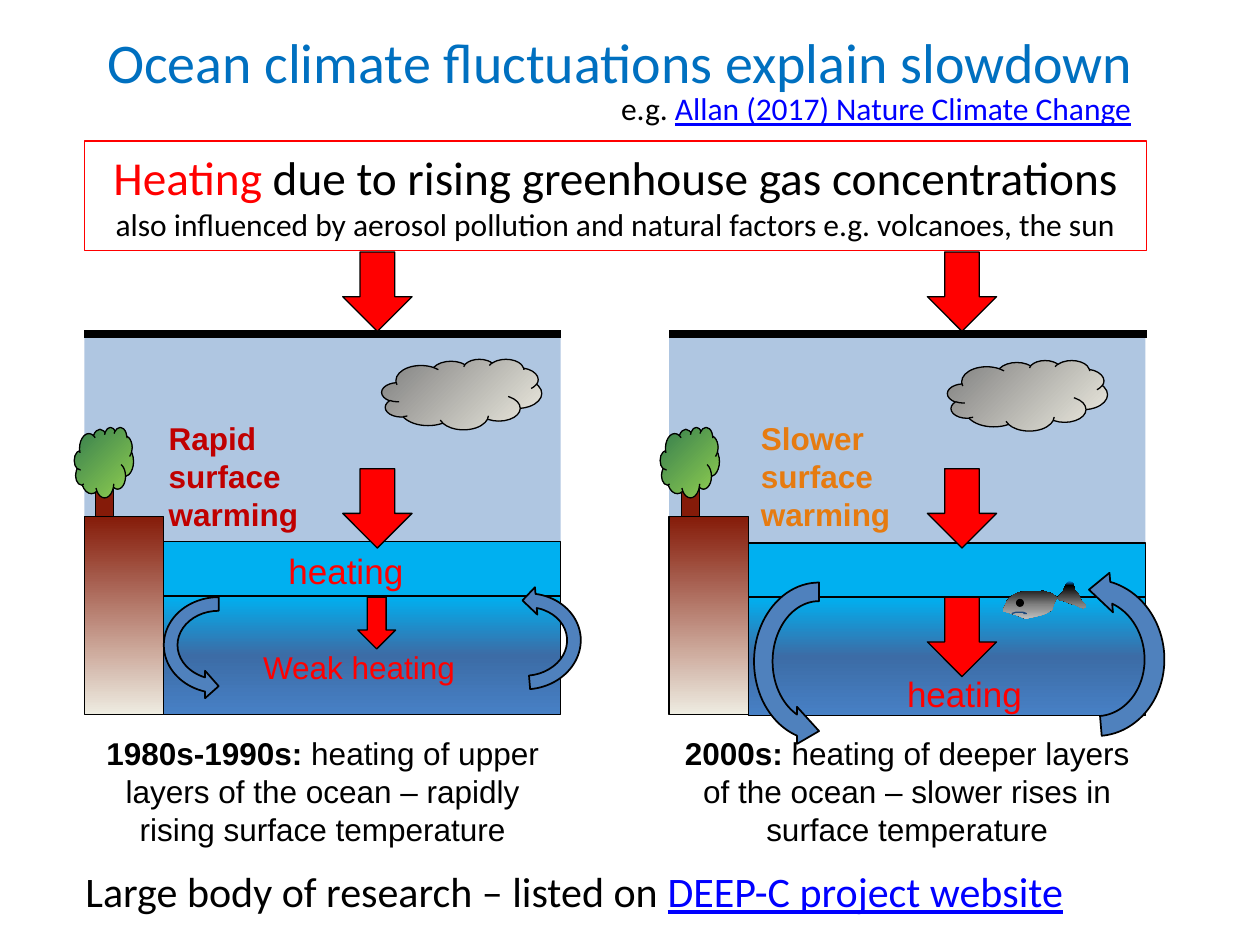
import pptx
import pptx.util
import pptx.dml.color
import pptx.enum.shapes
import pptx.enum.text
import pptx.oxml
import pptx.oxml.ns
import lxml.etree

Inches = pptx.util.Inches
RGBColor = pptx.dml.color.RGBColor
KIND = pptx.enum.shapes.MSO_SHAPE
ALIGN = pptx.enum.text.PP_ALIGN
ANCHOR = pptx.enum.text.MSO_ANCHOR
qn = pptx.oxml.ns.qn

BLACK = RGBColor(0x00, 0x00, 0x00)
RED = RGBColor(0xFF, 0x00, 0x00)
DARK_RED = RGBColor(0xC0, 0x00, 0x00)
ORANGE = RGBColor(0xE6, 0x7B, 0x10)
BLUE = RGBColor(0x4F, 0x81, 0xBD)
NAVY = RGBColor(0x1F, 0x49, 0x7D)
SKY = RGBColor(0x00, 0xB0, 0xF0)
TITLE = RGBColor(0x00, 0x70, 0xC0)
LINK = RGBColor(0x00, 0x00, 0xFF)
BROWN = RGBColor(0x85, 0x1B, 0x09)
CREAM = RGBColor(0xEE, 0xEC, 0xE1)
GREY = RGBColor(0x80, 0x80, 0x80)
SILVER = RGBColor(0xBF, 0xBF, 0xBF)
LEAF = RGBColor(0x92, 0xD0, 0x50)
PINE = RGBColor(0x36, 0x7E, 0x4E)
DEEP = RGBColor(0x3C, 0x6C, 0xA6)
FLOOR = RGBColor(0x47, 0x80, 0xC5)

SEA = [(0, SKY), (50, DEEP), (100, FLOOR)]
LAND = [(0, BROWN), (100, CREAM)]
TREE = [(0, LEAF), (100, PINE)]
CLOUD = [(0, CREAM), (100, GREY)]
SCALES = [(0, TITLE), (9, BLACK), (62, GREY), (100, SILVER)]

FISH = [
    (8.49, 4.78), (8.46, 4.77), (8.43, 4.76), (8.4, 4.75), (8.38, 4.74), (8.37, 4.72),
    (8.35, 4.71), (8.33, 4.7), (8.3, 4.7), (8.28, 4.69), (8.18, 4.7), (8.08, 4.67),
    (8.01, 4.75), (8, 4.76), (7.98, 4.78), (7.98, 4.8), (7.97, 4.82), (7.96, 4.84),
    (7.96, 4.85), (7.98, 4.86), (8.01, 4.86), (8.03, 4.87), (8.07, 4.88), (8.14, 4.91),
    (8.14, 4.91), (8.18, 4.9), (8.25, 4.89), (8.3, 4.87), (8.32, 4.86), (8.33, 4.85),
    (8.35, 4.84), (8.36, 4.82), (8.36, 4.8), (8.37, 4.78), (8.39, 4.74), (8.41, 4.73),
    (8.44, 4.69), (8.45, 4.67), (8.46, 4.59), (8.51, 4.62), (8.53, 4.63), (8.52, 4.66),
    (8.53, 4.68), (8.54, 4.69), (8.55, 4.7), (8.56, 4.71), (8.57, 4.73), (8.57, 4.75),
    (8.58, 4.76), (8.59, 4.78), (8.64, 4.81), (8.62, 4.82), (8.59, 4.84), (8.56, 4.81),
    (8.53, 4.8), (8.39, 4.76), (8.46, 4.76), (8.4, 4.76)]
MOUTH = [
    (8.03, 4.87), (8.04, 4.87), (8.05, 4.87), (8.06, 4.86), (8.06, 4.86), (8.07, 4.86),
    (8.07, 4.86), (8.09, 4.86), (8.1, 4.86), (8.12, 4.86), (8.17, 4.87), (8.09, 4.87),
    (8.15, 4.87)]


def paint(shape, fill=None, line=None, width=0.75):
    """Set a solid or empty fill and line, with no shadow."""
    shape.shadow.inherit = False
    for part, tint in ((shape.fill, fill), (shape.line.fill, line)):
        if tint is None:
            part.background()
        else:
            part.solid()
            part.fore_color.rgb = tint
    if line is not None:
        shape.line.width = pptx.util.Pt(width)


def blend(shape, stops, round=False):
    """Swap the empty fill of a shape for a gradient."""
    grad = lxml.etree.Element(qn("a:gradFill"), rotWithShape="1")
    marks = lxml.etree.SubElement(grad, qn("a:gsLst"))
    for place, tint in stops:
        mark = lxml.etree.SubElement(marks, qn("a:gs"), pos=str(place * 1000))
        lxml.etree.SubElement(mark, qn("a:srgbClr"), val=str(tint))
    if round:
        way = lxml.etree.SubElement(grad, qn("a:path"), path="circle")
        lxml.etree.SubElement(way, qn("a:fillToRect"), l="100000", t="100000")
    else:
        lxml.etree.SubElement(grad, qn("a:lin"), ang="5400000", scaled="0")
    props = shape._element.spPr
    props.replace(props.find(qn("a:noFill")), grad)


def block(shapes, kind, box, fill=None, line=BLACK, width=0.75):
    """Add a preset shape; a list as fill makes a gradient."""
    shape = shapes.add_shape(kind, *map(Inches, box))
    if isinstance(fill, list):
        paint(shape, None, line, width)
        blend(shape, fill, kind == KIND.CLOUD)
    else:
        paint(shape, fill, line, width)
    return shape


def arrow(shapes, left, top, width=0.55, height=0.63):
    """Add a red arrow that points down."""
    shape = block(shapes, KIND.DOWN_ARROW, (left, top, width, height), RED)
    shape.adjustments[1] = 0.5


def swirl(shapes, box, turn):
    """Add a mirrored, turned circular arrow."""
    shape = block(shapes, KIND.CIRCULAR_ARROW, box, BLUE, BLACK, 1)
    shape._element.spPr.xfrm.set("flipH", "1")
    shape.rotation = turn


def write(par, runs, size, face, align=ALIGN.LEFT, tint=None):
    """Fill a paragraph with runs of text, tint, bold and underline."""
    par.alignment = align
    par.font.size = pptx.util.Pt(size)
    par.font.name = face
    if tint is not None:
        par.font.color.rgb = tint
    for text, style in runs:
        run = par.add_run()
        run.text = text
        for key, value in style.items():
            if key == "tint":
                run.font.color.rgb = value
            else:
                setattr(run.font, key, value)


def label(shapes, box, runs, size, face="Arial", align=ALIGN.CENTER, tint=BLACK):
    """Add a wrapped text box with one paragraph."""
    frame = shapes.add_textbox(*map(Inches, box)).text_frame
    frame.word_wrap = True
    write(frame.paragraphs[0], runs, size, face, align, tint)


def curve(shapes, nodes):
    """Add a freeform whose segments are cubic curves."""
    spots = [tuple(map(Inches, node)) for node in nodes]
    pen = shapes.build_freeform(*spots[0])
    pen.add_line_segments(spots[3::3], close=False)
    shape = pen.convert_to_shape()
    left, top = min(x for x, y in spots[::3]), min(y for x, y in spots[::3])
    for place, leg in enumerate(list(shape._element.iter(qn("a:lnTo")))):
        bend = lxml.etree.Element(qn("a:cubicBezTo"))
        for x, y in spots[3 * place + 1:3 * place + 4]:
            lxml.etree.SubElement(bend, qn("a:pt"), x=str(x - left), y=str(y - top))
        leg.getparent().replace(leg, bend)
    return shape


def fish(shapes):
    """Draw the fish as a group."""
    group = shapes.add_group_shape().shapes
    body = curve(group, FISH)
    paint(body)
    blend(body, SCALES)
    block(group, KIND.OVAL, (8.07, 4.76, 0.05, 0.05), BLACK, BLACK, 1)
    paint(curve(group, MOUTH), None, NAVY)


def panel(shapes, left, slip, cloud, pace, tint, years, story):
    """Draw one decade: air, sea, land, tree, cloud, arrows and words."""
    air = block(shapes, KIND.RECTANGLE, (left, 2.65, 3.78, 1.65 + 5 * slip), BLUE, None)
    shade = air._element.spPr.find(qn("a:solidFill"))[0]
    lxml.etree.SubElement(shade, qn("a:alpha"), val="45000")
    block(shapes, KIND.RECTANGLE, (left + 0.63, 4.73 + slip, 3.15, 0.94), SEA)
    block(shapes, KIND.RECTANGLE, (left, 4.1, 0.63, 1.57), LAND)
    block(shapes, KIND.RECTANGLE, (left + 0.63, 4.3 + slip, 3.15, 0.43), SKY)
    block(shapes, KIND.RECTANGLE, (left + 0.09 + slip, 3.84, 0.14, 0.26), BROWN)
    block(shapes, KIND.CLOUD, (left - 0.08 + slip, 3.39, 0.47, 0.56), TREE)
    top = shapes.add_connector(
        pptx.enum.shapes.MSO_CONNECTOR.STRAIGHT,
        *map(Inches, (left, 2.65, left + 3.78 + slip, 2.65)))
    top.line.color.rgb = BLACK
    top.line.width = pptx.util.Pt(5)
    lxml.etree.SubElement(top._element.spPr, qn("a:effectLst"))
    block(shapes, KIND.CLOUD, (cloud, 2.85 + slip, 1.27, 0.56), CLOUD)
    for height in (2, 3.72):
        arrow(shapes, left + 2.05, height)
    label(shapes, (left + 0.57 + 6 * slip, 3.28, 1.63, 1.01),
          [(pace + " surface warming", {"bold": True})], 18, align=ALIGN.LEFT, tint=tint)
    label(shapes, (left, 5.78, 3.78, 1.01),
          [(years + ": ", {"bold": True}), (story, {})], 18)


def main():
    """Build and save the slide."""
    deck = pptx.Presentation()
    deck.slide_width, deck.slide_height = Inches(10), Inches(7.5)
    shapes = deck.slides.add_slide(deck.slide_layouts[6]).shapes
    panel(shapes, 0.67, 0, 3.03, "Rapid", DARK_RED, "1980s-1990s",
          "heating of upper layers of the ocean – rapidly rising surface temperature")
    panel(shapes, 5.31, 0.01, 7.52, "Slower", ORANGE, "2000s",
          "heating of deeper layers of the ocean – slower rises in surface temperature")
    arrow(shapes, 2.84, 4.74, 0.3, 0.41)
    arrow(shapes, 7.36, 4.74)
    label(shapes, (2.09, 4.31, 1.31, 0.44), [("heating", {})], 20, tint=RED)
    label(shapes, (1.73, 5.09, 2.24, 0.4), [("Weak heating", {})], 18, tint=RED)
    label(shapes, (7, 5.29, 1.31, 0.44), [("heating", {})], 20, tint=RED)
    swirl(shapes, (1.3, 4.63, 0.87, 0.98), 270)
    swirl(shapes, (3.74, 4.6, 0.87, 0.98), 85)
    swirl(shapes, (5.8, 4.66, 1.4, 1.18), 270)
    swirl(shapes, (7.99, 4.59, 1.4, 1.26), 85)
    cause = block(shapes, KIND.RECTANGLE, (0.67, 1.12, 8.43, 0.87), None, RED).text_frame
    cause.word_wrap = True
    cause.vertical_anchor = ANCHOR.MIDDLE
    write(cause.paragraphs[0],
          [("Heating", {"tint": RED}),
           (" due to rising greenhouse gas concentrations", {"tint": BLACK})],
          27, "Calibri", ALIGN.CENTER)
    write(cause.add_paragraph(),
          [("also influenced by aerosol pollution and natural factors e.g. volcanoes, the sun", {})],
          18, "Calibri", ALIGN.CENTER, BLACK)
    link = {"tint": LINK, "underline": True}
    label(shapes, (0.28, 0.17, 9.29, 0.83),
          [("Ocean climate fluctuations explain slowdown", {})], 32, "Calibri", tint=TITLE)
    label(shapes, (0.58, 6.82, 8.36, 0.5),
          [("Large body of research – listed on ", {"tint": BLACK}),
           ("DEEP-C project website", link)], 24, "Calibri", ALIGN.LEFT, None)
    fish(shapes)
    label(shapes, (4.69, 0.66, 4.53, 0.4),
          [("e.g. ", {"tint": BLACK}), ("Allan (2017) Nature Climate Change", link)],
          18, "Calibri", tint=None)
    deck.save("out.pptx")


if __name__ == "__main__":
    main()
